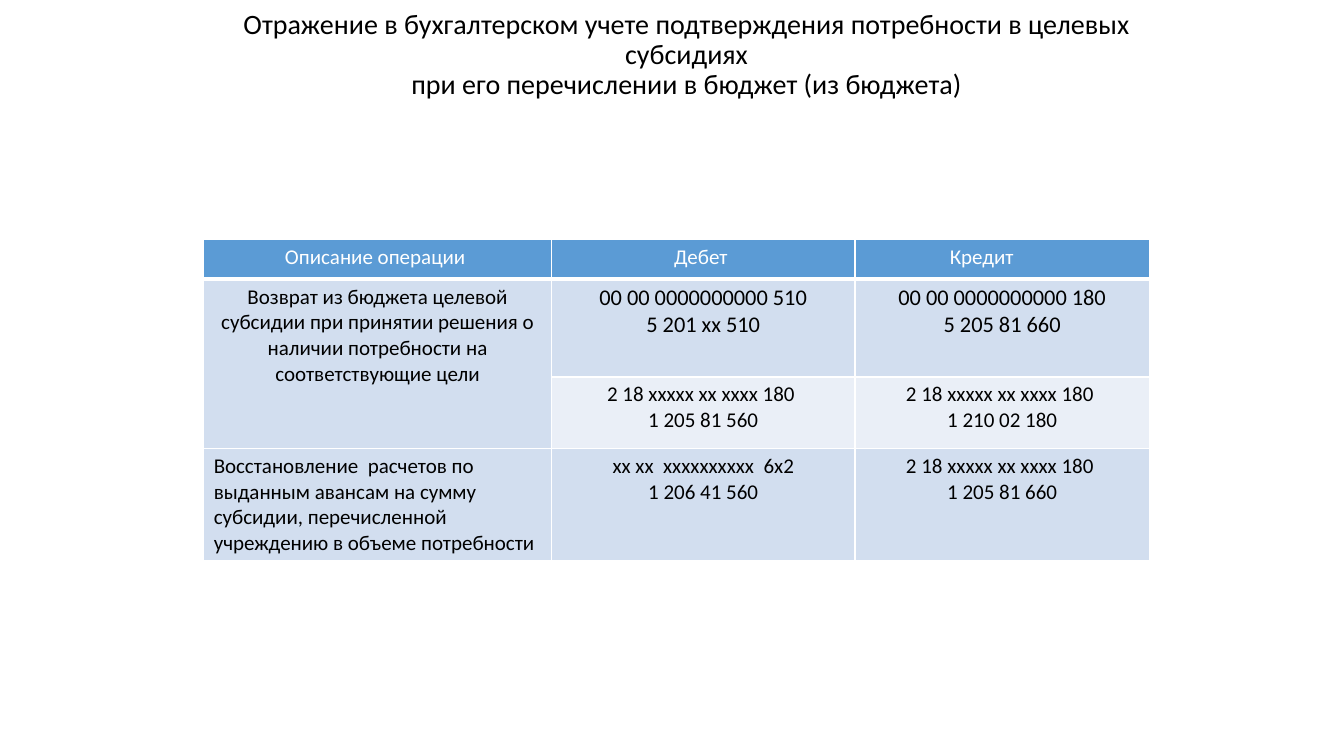
import pptx
import pptx.dml.color
import pptx.enum.text
import pptx.oxml
import pptx.oxml.ns
import pptx.util

Inches = pptx.util.Inches
Pt = pptx.util.Pt
ALIGN = pptx.enum.text.PP_ALIGN

TITLE_LINES = [
    "Отражение в бухгалтерском учете подтверждения потребности в целевых субсидиях",
    "при его перечислении в бюджет (из бюджета)",
]
ROWS = [
    [["Описание операции "], ["Дебет "], ["Кредит "]],
    [
        ["Возврат из бюджета целевой субсидии при принятии решения о наличии потребности на соответствующие цели"],
        ["00 00 0000000000 510", "5 201 хх 510"],
        ["00 00 0000000000 180", "5 205 81 660"],
    ],
    [
        [],
        ["2 18 ххххх хх хххх 180 ", "1 205 81 560"],
        ["2 18 ххххх хх хххх 180 ", "1 210 02 180"],
    ],
    [
        ["Восстановление  расчетов по выданным авансам на сумму субсидии, перечисленной учреждению в объеме потребности"],
        ["хх хх  хххххххххх  6х2", "1 206 41 560"],
        ["2 18 ххххх хх хххх 180 ", "1 205 81 660"],
    ],
]
COLUMN_WIDTHS = [3.45, 3.01, 2.92]
ROW_HEIGHTS = [0.39, 0.97, 0.71, 1.11]
LARGE_CELLS = {(1, 1), (1, 2)}
LEFT_CELLS = {(3, 0)}
RIGHT_MARGINS = {(0, 2): 0.46}

THEME = {
    "font": "Calibri",
    "title_size": 20,
    "cell_size": 15,
    "large_size": 16,
    "text": "000000",
    "header_text": "FFFFFF",
    "border": "FFFFFF",
    "row_fills": ["5B9BD5", "D2DEEF", "EAEFF7", "D2DEEF"],
}


def color(value):
    return pptx.dml.color.RGBColor.from_string(value)


def add_run(paragraph, text, size, text_color):
    run = paragraph.add_run()
    run.text = text
    run.font.name = THEME["font"]
    run.font.size = Pt(size)
    run.font.color.rgb = color(text_color)


def add_borders(cell, top, bottom):
    properties = cell._tc.get_or_add_tcPr()
    for side, width in (("L", 1), ("R", 1), ("T", top), ("B", bottom)):
        properties.append(pptx.oxml.parse_xml(
            f'<a:ln{side} {pptx.oxml.ns.nsdecls("a")} w="{Pt(width)}">'
            f'<a:solidFill><a:srgbClr val="{THEME["border"]}"/></a:solidFill></a:ln{side}>'
        ))


def add_title(slide):
    box = slide.shapes.add_textbox(Inches(2.31), Inches(0.36), Inches(9), Inches(0.38))
    frame = box.text_frame
    frame.word_wrap = True
    frame.vertical_anchor = pptx.enum.text.MSO_ANCHOR.MIDDLE
    paragraph = frame.paragraphs[0]
    paragraph.alignment = ALIGN.CENTER
    paragraph.line_spacing = 0.9
    for index, line in enumerate(TITLE_LINES):
        if index:
            paragraph.add_line_break()
        add_run(paragraph, line, THEME["title_size"], THEME["text"])


def fill_cell(cell, position, lines):
    row = position[0]
    add_borders(cell, 3 if row == 1 else 1, 3 if row == 0 else 1)
    cell.fill.solid()
    cell.fill.fore_color.rgb = color(THEME["row_fills"][row])
    cell.margin_left = Inches(0.1)
    cell.margin_right = Inches(RIGHT_MARGINS.get(position, 0.1))
    cell.margin_top = cell.margin_bottom = Inches(0.05)
    size = THEME["large_size" if position in LARGE_CELLS else "cell_size"]
    text_color = THEME["text" if row else "header_text"]
    for index, line in enumerate(lines):
        frame = cell.text_frame
        paragraph = frame.add_paragraph() if index else frame.paragraphs[0]
        paragraph.alignment = ALIGN.LEFT if position in LEFT_CELLS else ALIGN.CENTER
        add_run(paragraph, line, size, text_color)


def add_entries_table(slide):
    table = slide.shapes.add_table(
        len(ROWS), len(COLUMN_WIDTHS), Inches(2.02), Inches(2.38),
        Inches(sum(COLUMN_WIDTHS)), Inches(sum(ROW_HEIGHTS)),
    ).table
    for column, width in zip(table.columns, COLUMN_WIDTHS):
        column.width = Inches(width)
    for row, height in zip(table.rows, ROW_HEIGHTS):
        row.height = Inches(height)
    table.cell(1, 0).merge(table.cell(2, 0))
    for row_index, row in enumerate(ROWS):
        for column_index, lines in enumerate(row):
            fill_cell(table.cell(row_index, column_index), (row_index, column_index), lines)


def main():
    presentation = pptx.Presentation()
    presentation.slide_width = Inches(13.33)
    presentation.slide_height = Inches(7.5)
    slide = presentation.slides.add_slide(presentation.slide_layouts[6])
    add_title(slide)
    add_entries_table(slide)
    presentation.save("out.pptx")


if __name__ == "__main__":
    main()
